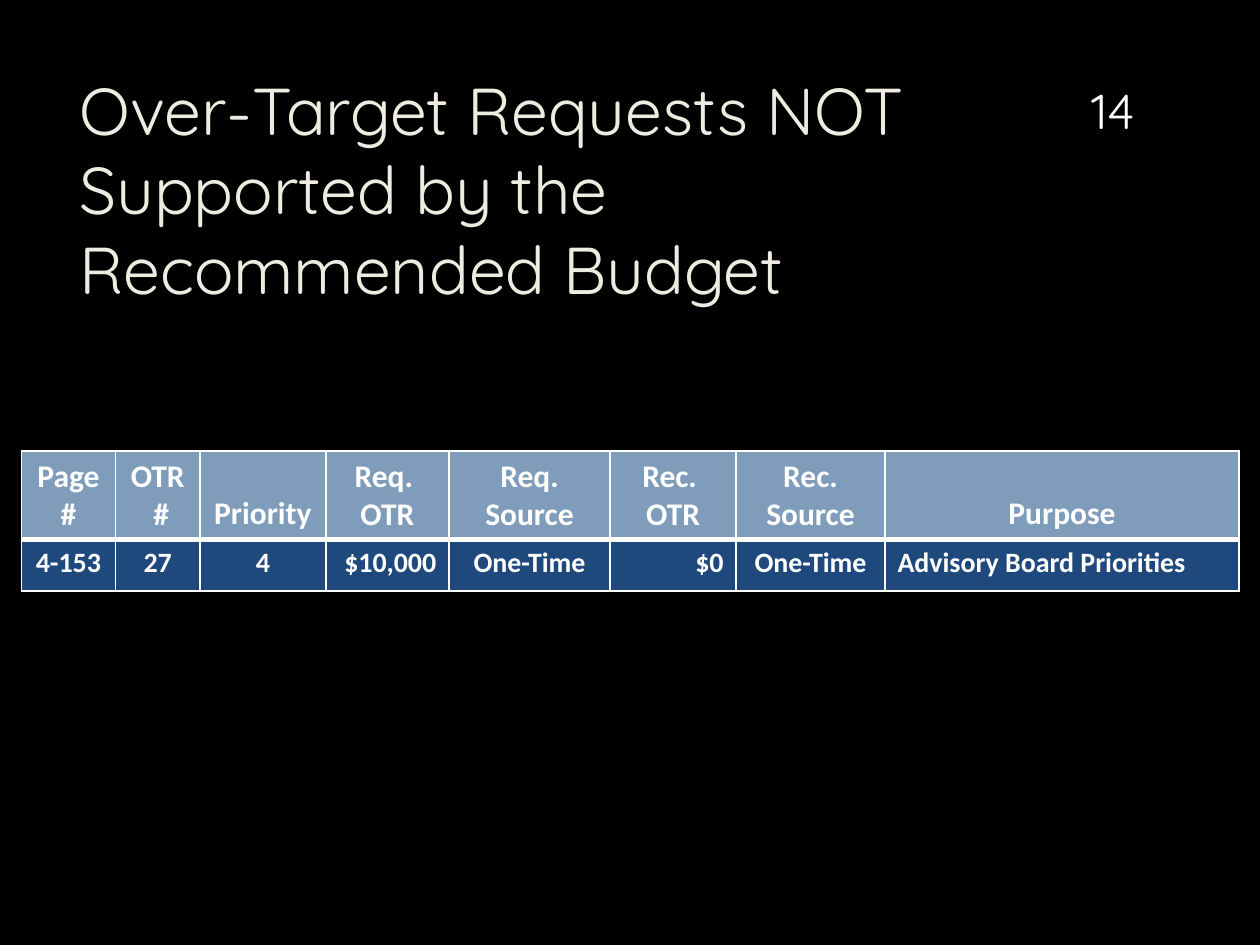
from dataclasses import dataclass

import lxml.etree
import pptx
import pptx.dml.color
import pptx.enum.text
import pptx.oxml.ns
import pptx.util

Cm = pptx.util.Cm
Pt = pptx.util.Pt
Align = pptx.enum.text.PP_ALIGN
Anchor = pptx.enum.text.MSO_ANCHOR

COLORS = {
    "background": "000000",
    "title": "EEECE1",
    "white": "FFFFFF",
    "header": "7F9DBB",
    "body": "1F497D",
}


@dataclass(frozen=True)
class Column:
    width: float
    heading: tuple[str, ...]
    request: str
    align: Align = Align.CENTER


@dataclass(frozen=True)
class TextStyle:
    font: str
    size: float
    color: str
    bold: bool = False
    align: Align = Align.LEFT
    anchor: Anchor = Anchor.TOP


@dataclass(frozen=True)
class RowStyle:
    fill: str
    size: float
    anchor: Anchor
    top_line: float
    bottom_line: float


COLUMNS = (
    Column(1.9, ("Page ", "#"), "4-153"),
    Column(1.7, ("OTR", " #"), "27"),
    Column(2.54, ("Priority",), "4"),
    Column(2.48, ("Req. ", "OTR"), "$10,000", Align.RIGHT),
    Column(3.25, ("Req. Source",), "One-Time"),
    Column(2.54, ("Rec. ", "OTR"), "$0", Align.RIGHT),
    Column(3.0, ("Rec. Source",), "One-Time"),
    Column(7.14, ("Purpose",), "Advisory Board Priorities", Align.LEFT),
)
HEADER = RowStyle("header", 18, Anchor.BOTTOM, 1, 3)
BODY = RowStyle("body", 16, Anchor.TOP, 3, 1)


def rgb(name: str) -> pptx.dml.color.RGBColor:
    return pptx.dml.color.RGBColor.from_string(COLORS[name])


def write(frame, lines: tuple[str, ...], style: TextStyle) -> None:
    for index, line in enumerate(lines):
        paragraph = frame.add_paragraph() if index else frame.paragraphs[0]
        paragraph.alignment = style.align
        run = paragraph.add_run()
        run.text = line
        run.font.name = style.font
        run.font.size = Pt(style.size)
        run.font.bold = style.bold
        run.font.color.rgb = rgb(style.color)


def add_text(slide, box: tuple[float, ...], text: str, style: TextStyle) -> None:
    frame = slide.shapes.add_textbox(*map(Cm, box)).text_frame
    frame.word_wrap = True
    frame.vertical_anchor = style.anchor
    write(frame, (text,), style)


def add_borders(cell, row: RowStyle) -> None:
    properties = cell._tc.get_or_add_tcPr()
    widths = {"lnL": 1, "lnR": 1, "lnT": row.top_line, "lnB": row.bottom_line}
    for index, (side, width) in enumerate(widths.items()):
        line = lxml.etree.Element(pptx.oxml.ns.qn(f"a:{side}"), w=str(Pt(width)))
        fill = lxml.etree.SubElement(line, pptx.oxml.ns.qn("a:solidFill"))
        lxml.etree.SubElement(fill, pptx.oxml.ns.qn("a:srgbClr"), val=COLORS["white"])
        properties.insert(index, line)


def fill_cell(cell, lines: tuple[str, ...], align: Align, row: RowStyle) -> None:
    cell.fill.solid()
    cell.fill.fore_color.rgb = rgb(row.fill)
    cell.vertical_anchor = row.anchor
    write(cell.text_frame, lines, TextStyle("Calibri", row.size, "white", True, align))
    add_borders(cell, row)


def add_requests(slide) -> None:
    width = sum(column.width for column in COLUMNS)
    requests = slide.shapes.add_table(
        2, len(COLUMNS), Cm(0.43), Cm(9.09), Cm(width), Cm(2.82)
    ).table
    requests.rows[0].height = Cm(1.78)
    requests.rows[1].height = Cm(1.04)
    for index, column in enumerate(COLUMNS):
        requests.columns[index].width = Cm(column.width)
        fill_cell(requests.cell(0, index), column.heading, Align.CENTER, HEADER)
        fill_cell(requests.cell(1, index), (column.request,), column.align, BODY)


def main() -> None:
    deck = pptx.Presentation()
    deck.slide_width = Cm(25.4)
    deck.slide_height = Cm(19.05)
    slide = deck.slides.add_slide(deck.slide_layouts[6])
    slide.background.fill.solid()
    slide.background.fill.fore_color.rgb = rgb("background")

    add_text(
        slide,
        (1.35, 1.27, 19.6, 3.89),
        "Over-Target Requests NOT Supported by the Recommended Budget",
        TextStyle("Quicksand", 37.8, "title"),
    )
    add_text(
        slide,
        (21.56, 0.81, 1.75, 2.13),
        "14",
        TextStyle("Quicksand", 28, "white", align=Align.CENTER, anchor=Anchor.BOTTOM),
    )
    add_requests(slide)
    deck.save("out.pptx")


if __name__ == "__main__":
    main()
